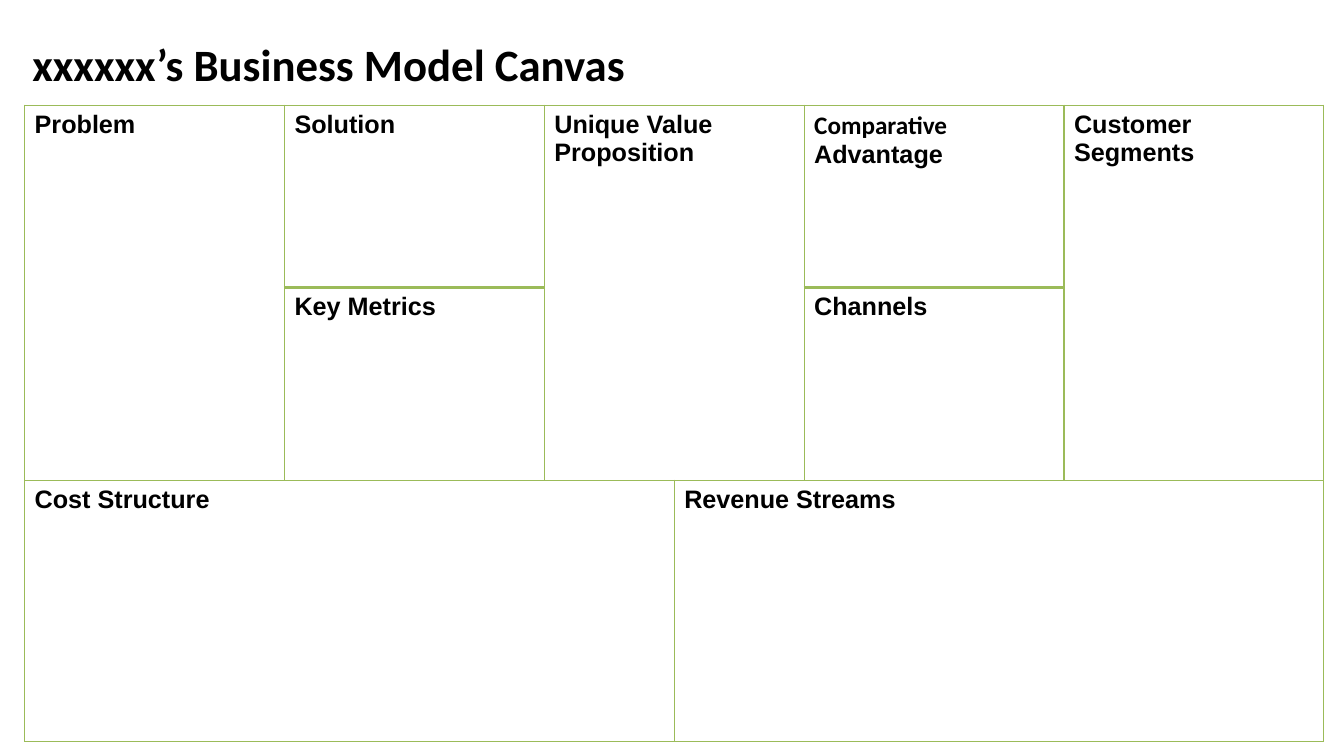
from lxml import etree
from pptx import Presentation
from pptx.dml.color import RGBColor
from pptx.enum.text import MSO_ANCHOR, MSO_AUTO_SIZE, PP_ALIGN
from pptx.oxml.ns import qn
from pptx.util import Cm, Pt

MIDDLE = MSO_ANCHOR.MIDDLE
LEFT = PP_ALIGN.LEFT
NO_AUTOFIT = MSO_AUTO_SIZE.NONE

COLORS = {"text": "000000", "grid": "9BBB59"}
PLAIN_TABLE_STYLE = "{2D5ABB26-0587-4C30-8999-92F81FD0307C}"
TITLE_ONLY_LAYOUT = 5

# Column widths are shares of the canvas; the middle column is split in two
COLUMN_SHARES = [2, 2, 1, 1, 2, 2]
ROW_HEIGHTS = [4.6, 4.85, 6.58]

# Row, column, rows spanned, columns spanned, bottom line width, (text, font) spans
SECTIONS = [
    (0, 0, 2, 1, 1, [("Problem", "Arial")]),
    (0, 1, 1, 1, 2, [("Solution", "Arial")]),
    (0, 2, 2, 2, 1, [("Unique Value Proposition", "Arial")]),
    (0, 4, 1, 1, 2, [("Comparative ", "Calibri"), ("Advantage", "Arial")]),
    (0, 5, 2, 1, 1, [("Customer Segments", "Arial")]),
    (1, 1, 1, 1, 1, [("Key Metrics", "Arial")]),
    (1, 4, 1, 1, 1, [("Channels", "Arial")]),
    (2, 0, 1, 3, 1, [("Cost Structure", "Arial")]),
    (2, 3, 1, 3, 1, [("Revenue Streams", "Arial")]),
]


def style_font(font, size):
    font.size = Pt(size)
    font.bold = True
    font.color.rgb = RGBColor.from_string(COLORS["text"])


def set_borders(cell, bottom_width):
    properties = cell._tc.get_or_add_tcPr()
    widths = {"a:lnL": 1, "a:lnR": 1, "a:lnT": 1, "a:lnB": bottom_width}
    for tag, width in widths.items():
        line = etree.SubElement(properties, qn(tag), w=str(Pt(width)))
        fill = etree.SubElement(line, qn("a:solidFill"))
        etree.SubElement(fill, qn("a:srgbClr"), val=COLORS["grid"])


def add_title(page, left, top, width, height):
    title = page.shapes.title
    title.left, title.top, title.width, title.height = left, top, width, height
    frame = title.text_frame
    frame.text = "xxxxxx’s Business Model Canvas"
    frame.word_wrap = True
    frame.auto_size = NO_AUTOFIT
    frame.vertical_anchor = MIDDLE
    para = frame.paragraphs[0]
    para.alignment = LEFT
    para.font.name = "Calibri"
    style_font(para.font, 32)


def fill_section(cell, bottom_width, spans):
    set_borders(cell, bottom_width)
    cell.fill.background()
    para = cell.text_frame.paragraphs[0]
    for text, font_name in spans:
        span = para.add_run()
        span.text = text
        span.font.name = font_name
        style_font(span.font, 18)


def add_canvas(page, left, top, width):
    height = Cm(sum(ROW_HEIGHTS))
    table = page.shapes.add_table(
        len(ROW_HEIGHTS), len(COLUMN_SHARES), left, top, width, height).table
    table.first_row = False
    table.horz_banding = False
    table._tbl.tblPr.find(qn("a:tableStyleId")).text = PLAIN_TABLE_STYLE

    for column, share in zip(table.columns, COLUMN_SHARES):
        column.width = int(width * share / sum(COLUMN_SHARES))
    for row, row_height in zip(table.rows, ROW_HEIGHTS):
        row.height = Cm(row_height)

    for row, column, row_span, column_span, bottom_width, spans in SECTIONS:
        cell = table.cell(row, column)
        if row_span * column_span > 1:
            cell.merge(table.cell(row + row_span - 1, column + column_span - 1))
        fill_section(cell, bottom_width, spans)


def main():
    deck = Presentation()
    deck.slide_width, deck.slide_height = Cm(33.87), Cm(19.05)
    page = deck.slides.add_slide(deck.slide_layouts[TITLE_ONLY_LAYOUT])
    add_title(page, Cm(0.56), Cm(0.61), Cm(23.4), Cm(2))
    add_canvas(page, Cm(0.62), Cm(2.65), Cm(32.74))
    deck.save("out.pptx")


if __name__ == "__main__":
    main()
